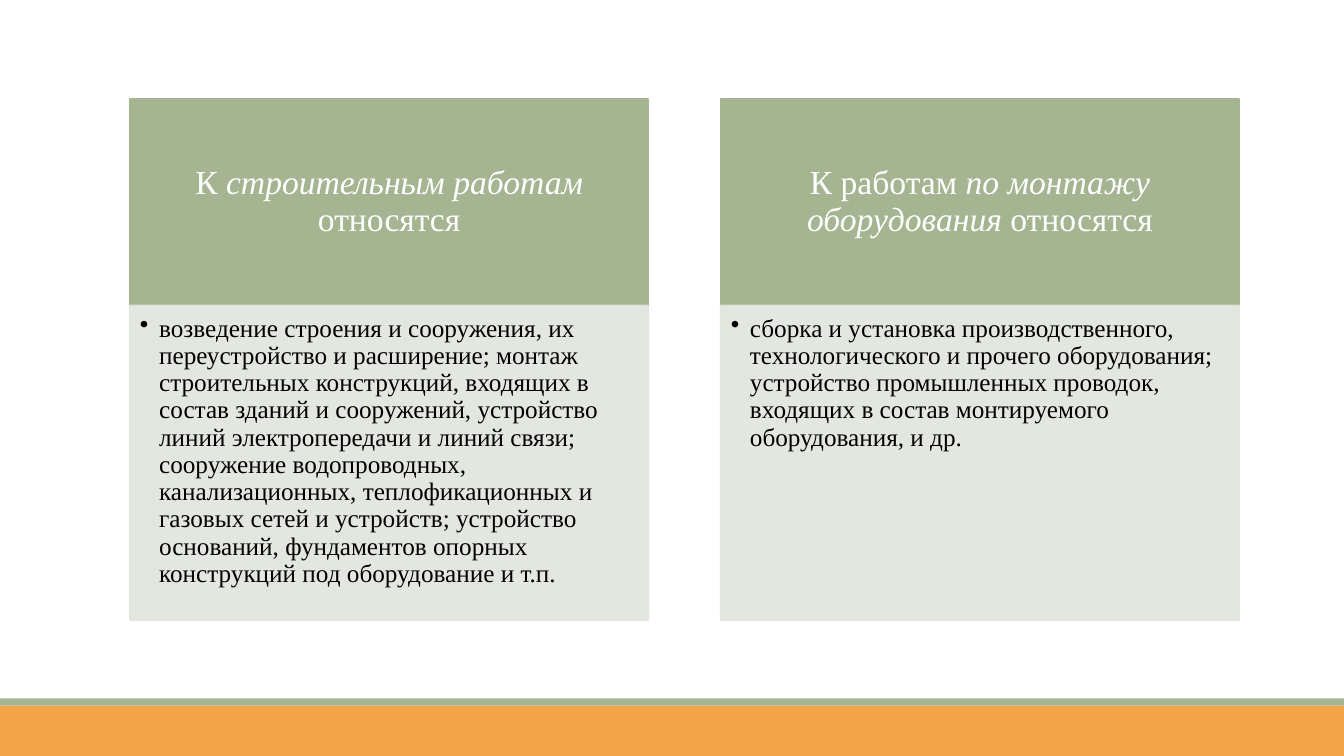
from dataclasses import dataclass

from lxml import etree
from pptx import Presentation
from pptx import util as u
from pptx.dml.color import RGBColor
from pptx.enum import shapes, text
from pptx.oxml.ns import qn

PX = 9144  # 100 px to the inch
WIDE, HIGH = 1333, 750
GREEN, PALE, ORANGE = "A5B592", "E1E5DC", "F3A447"
WHITE, BLACK = "FFFFFF", "000000"
FONT = "Times New Roman"
LEFT, TOP, STEP = 129, 98, 586
CARD_W, HEAD_H, BODY_H = 514, 205, 312
HEAD = {"margin_left": 19, "margin_top": 11, "margin_right": 19, "margin_bottom": 11}
BODY = {"margin_left": 10, "margin_top": 10, "margin_right": 14, "margin_bottom": 16}


@dataclass
class Box:
    x: int
    y: int
    w: int
    h: int
    fill: str
    edge: bool = False
    alpha: int = 100


@dataclass
class Card:
    lead: str
    key: str
    tail: str
    body: str


CARDS = [
    Card("К ", "строительным работам", " относятся",
         "возведение строения и сооружения, их переустройство и расширение; "
         "монтаж строительных конструкций, входящих в состав зданий и сооружений, "
         "устройство линий электропередачи и линий связи; сооружение водопроводных, "
         "канализационных, теплофикационных и газовых сетей и устройств; устройство "
         "оснований, фундаментов опорных конструкций под оборудование и т.п."),
    Card("К работам ", "по монтажу оборудования", " относятся",
         "сборка и установка производственного, технологического и прочего "
         "оборудования; устройство промышленных проводок, входящих в состав "
         "монтируемого оборудования, и др."),
]


def px(n: int) -> u.Emu:
    return u.Emu(n * PX)


def tint(fill, color: str, alpha: int = 100) -> None:
    """Make the fill solid, with alpha as percent of opacity."""
    fill.solid()
    fill.fore_color.rgb = RGBColor.from_string(color)
    if alpha < 100:
        node = fill._xPr.find(qn("a:solidFill"))[0]
        etree.SubElement(node, qn("a:alpha"), val=str(alpha * 1000))


def draw(slide, box: Box):
    rect = slide.shapes.add_shape(
        shapes.MSO_SHAPE.RECTANGLE, px(box.x), px(box.y), px(box.w), px(box.h))
    rect.shadow.inherit = False
    tint(rect.fill, box.fill, box.alpha)
    if box.edge:
        rect.line.width = u.Pt(1.25)
        tint(rect.line.fill, box.fill, box.alpha)
    else:
        rect.line.fill.background()
    return rect


def write(rect, runs: list[tuple[str, bool]], size: int, color: str,
          insets: dict[str, int], anchor, align):
    """Fill the shape with one paragraph of (words, italic) runs."""
    frame = rect.text_frame
    frame.word_wrap = True
    frame.vertical_anchor = anchor
    for name, inset in insets.items():
        setattr(frame, name, px(inset))
    para = frame.paragraphs[0]
    para.alignment = align
    para.line_spacing = 0.9
    for words, slant in runs:
        run = para.add_run()
        run.text = words
        look = {"name": FONT, "size": u.Pt(size), "italic": slant}
        for name, value in look.items():
            setattr(run.font, name, value)
        run.font.color.rgb = RGBColor.from_string(color)
    return para


def bullet(para, hang: int) -> None:
    props = para._p.get_or_add_pPr()
    props.set("marL", str(px(hang)))
    props.set("indent", str(px(-hang)))
    etree.SubElement(props, qn("a:buChar"), char="•")


def place(slide, card: Card, x: int) -> None:
    head = draw(slide, Box(x, TOP, CARD_W, HEAD_H, GREEN, True))
    write(head, [(card.lead, False), (card.key, True), (card.tail, False)],
          24, WHITE, HEAD, text.MSO_ANCHOR.MIDDLE, text.PP_ALIGN.CENTER)
    body = draw(slide, Box(x, TOP + HEAD_H, CARD_W, BODY_H, PALE, True, 90))
    para = write(body, [(card.body, False)], 18, BLACK, BODY,
                 text.MSO_ANCHOR.TOP, text.PP_ALIGN.LEFT)
    bullet(para, 19)


def main() -> None:
    deck = Presentation()
    deck.slide_width, deck.slide_height = px(WIDE), px(HIGH)
    slide = deck.slides.add_slide(deck.slide_layouts[6])
    for band in (Box(0, 700, WIDE, 50, ORANGE), Box(0, 693, WIDE, 7, GREEN)):
        draw(slide, band)
    for i, card in enumerate(CARDS):
        place(slide, card, LEFT + i * STEP)
    deck.save("out.pptx")


if __name__ == "__main__":
    main()
